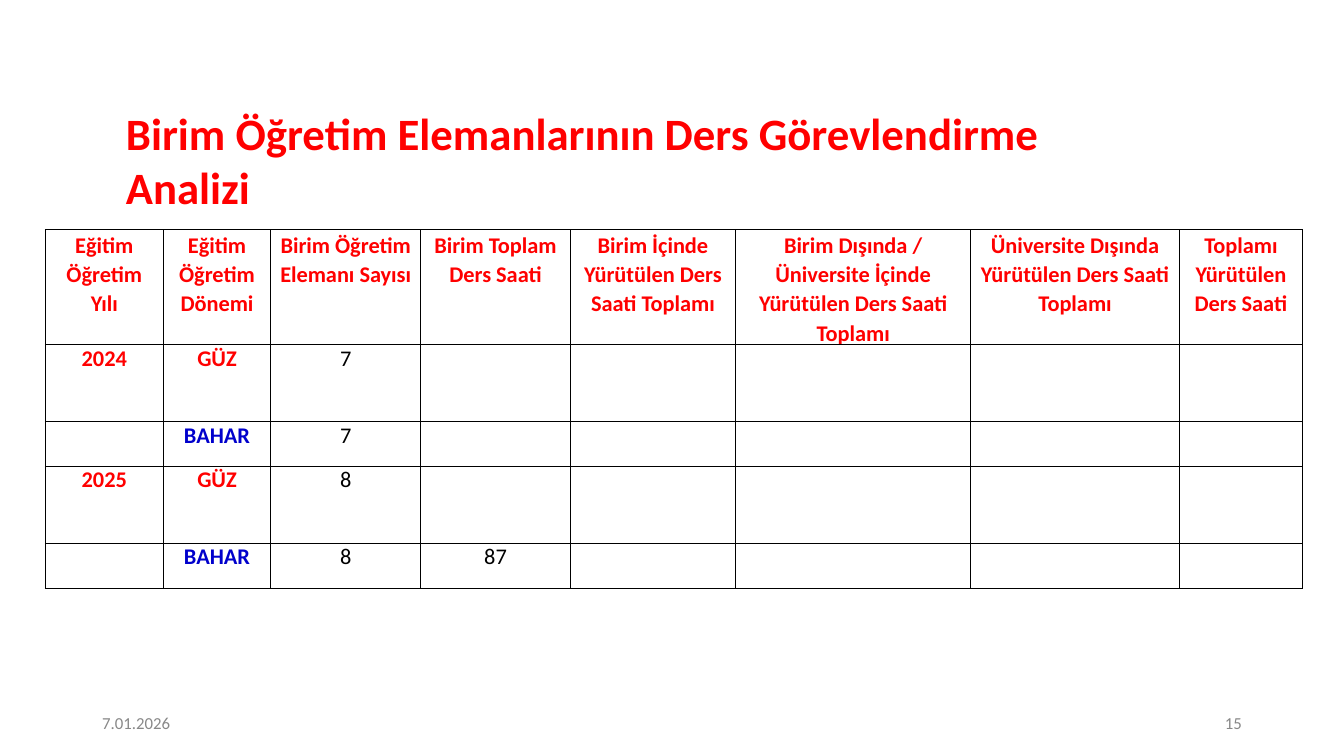
from pptx import Presentation
from pptx.dml.color import RGBColor
from pptx.enum.text import MSO_ANCHOR, PP_ALIGN
from pptx.oxml import parse_xml
from pptx.oxml.ns import nsdecls
from pptx.util import Pt

CENTER, LEFT = PP_ALIGN.CENTER, PP_ALIGN.LEFT
TOP = MSO_ANCHOR.TOP

THEME = {
    "face": "Calibri",
    "line": "000000",
    "title": {"size": 32, "bold": True, "color": "FF0000"},
    "head": {"size": 16, "bold": True, "color": "FF0000"},
    "spring": {"size": 16, "bold": True, "color": "0000CC"},
    "value": {"size": 16, "bold": False, "color": "000000"},
    "foot": {"size": 12, "bold": False, "color": "888888"},
}


def write(frame, text, role, align=LEFT, pitch=1.0):
    style = THEME[role]
    para = frame.paragraphs[0]
    para.alignment, para.line_spacing = align, pitch
    para.text = text
    font = para.font
    looks = {"name": THEME["face"], "size": Pt(style["size"]), "bold": style["bold"]}
    for key, val in looks.items():
        setattr(font, key, val)
    font.color.rgb = RGBColor.from_string(style["color"])


def frame_cell(cell, pad):
    """Give a cell thin lines on all sides, no fill and its side margins."""
    props = cell._tc.get_or_add_tcPr()
    for side in "LRTB":
        props.append(parse_xml(
            f'<a:ln{side} {nsdecls("a")} w="12700"><a:solidFill>'
            f'<a:srgbClr val="{THEME["line"]}"/></a:solidFill></a:ln{side}>'))
    cell.fill.background()
    cell.vertical_anchor = TOP
    cell.margin_left = cell.margin_right = Pt(pad)
    cell.margin_top = cell.margin_bottom = 0


deck = Presentation()
deck.slide_width, deck.slide_height = Pt(960), Pt(540)
slide = deck.slides.add_slide(deck.slide_layouts[6])

# Title, date and page number
LABELS = [
    ("Birim Öğretim Elemanlarının Ders Görevlendirme Analizi",
     "title", (90, 75.6, 720, 78), True),
    ("7.01.2026", "foot", (73, 509, 52, 15), False),
    ("15", "foot", (875, 509, 14, 15), False),
]
for text, role, spot, wrap in LABELS:
    frame = slide.shapes.add_textbox(*map(Pt, spot)).text_frame
    frame.word_wrap = wrap
    frame.margin_left = frame.margin_right = 0
    frame.margin_top = frame.margin_bottom = 0
    write(frame, text, role)

# Teaching load table: heading, column width, side margin
COLS = [
    ("Eğitim Öğretim Yılı", 84, 12),
    ("Eğitim Öğretim Dönemi", 77, 6),
    ("Birim Öğretim Elemanı Sayısı", 107, 3),
    ("Birim Toplam Ders Saati", 107, 4),
    ("Birim İçinde Yürütülen Ders Saati Toplamı", 118, 8),
    ("Birim Dışında / Üniversite İçinde Yürütülen Ders Saati Toplamı", 168, 14),
    ("Üniversite Dışında Yürütülen Ders Saati Toplamı", 149, 3),
    ("Toplamı Yürütülen Ders Saati", 88, 5),
]
TERMS = [
    ("2024", "GÜZ", "7"),
    ("", "BAHAR", "7"),
    ("2025", "GÜZ", "8"),
    ("", "BAHAR", "8", "87"),
]
HIGHS = [82, 55, 32, 55, 32]
wides = [wide for _, wide, _ in COLS]
rows = [[head for head, _, _ in COLS]] + TERMS

grid = slide.shapes.add_table(
    len(rows), len(COLS), Pt(32.5), Pt(164.2), Pt(sum(wides)), Pt(sum(HIGHS))).table
grid.first_row = grid.horz_banding = False
for col, wide in zip(grid.columns, wides):
    col.width = Pt(wide)
for row, high in zip(grid.rows, HIGHS):
    row.height = Pt(high)

for r, row in enumerate(rows):
    for c, (_, _, pad) in enumerate(COLS):
        cell = grid.cell(r, c)
        frame_cell(cell, pad)
        text = row[c] if c < len(row) else ""
        if text == "BAHAR":
            role = "spring"
        else:
            role = "head" if r == 0 or c < 2 else "value"
        write(cell.text_frame, text, role, CENTER, 1.07 if r == 0 else 1.0)

deck.save("out.pptx")
